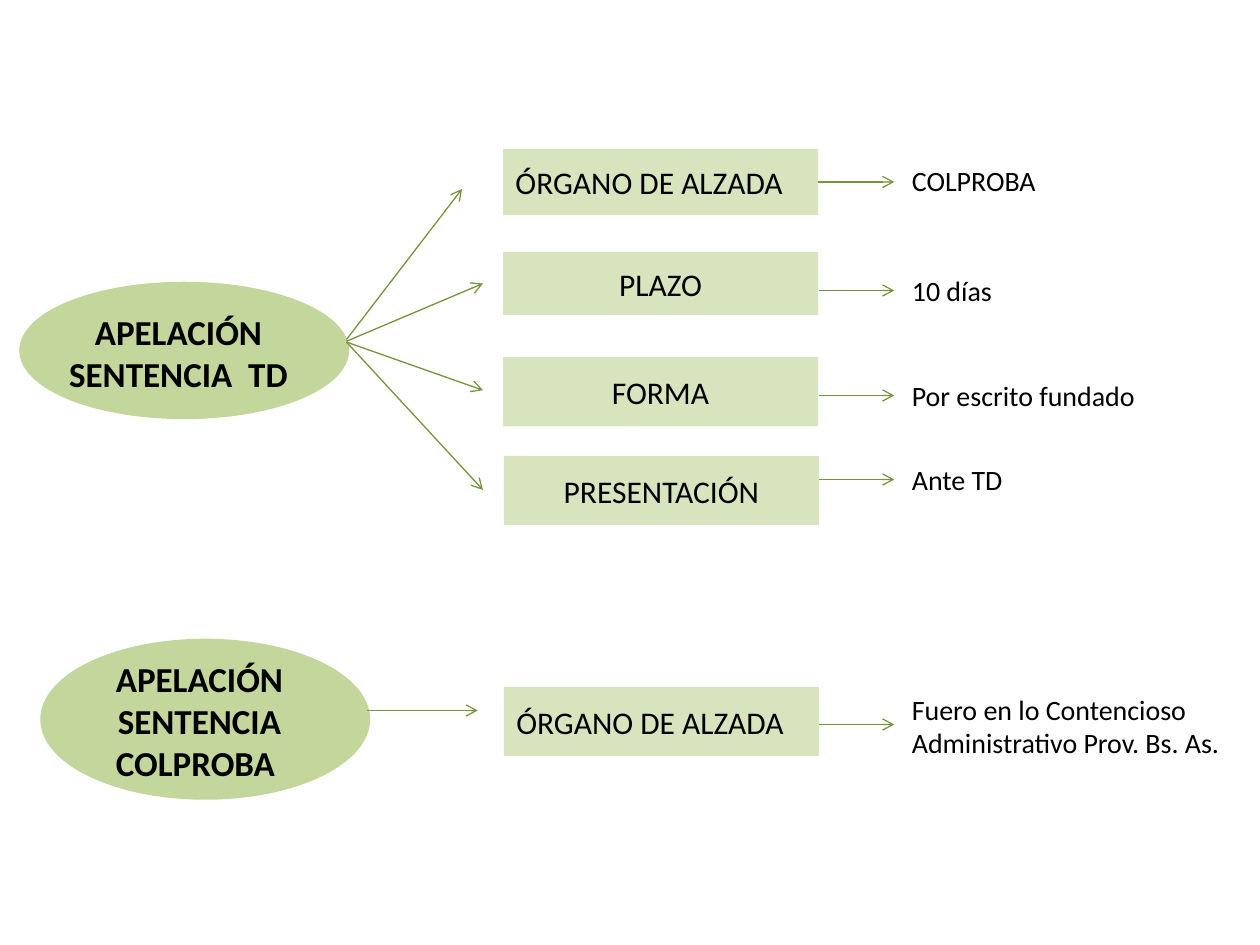
from dataclasses import dataclass

from lxml import etree
from pptx import Presentation
from pptx.dml.color import RGBColor
from pptx.enum.shapes import MSO_CONNECTOR, MSO_SHAPE
from pptx.enum.text import MSO_ANCHOR, PP_ALIGN
from pptx.oxml.ns import qn
from pptx.util import Pt

RECTANGLE, OVAL = MSO_SHAPE.RECTANGLE, MSO_SHAPE.OVAL
STRAIGHT = MSO_CONNECTOR.STRAIGHT
LEFT, CENTER = PP_ALIGN.LEFT, PP_ALIGN.CENTER
TOP, MIDDLE = MSO_ANCHOR.TOP, MSO_ANCHOR.MIDDLE

OVAL_GREEN, BOX_GREEN, ARROW_GREEN, BLACK = "C3D69B", "D7E4BD", "77933C", "000000"
BOX_WIDTH, BOX_RIGHT = 180, 468
ANSWER_LEFT, ARROW_END = 514, 511
RIGHT_SIDE = 3

TOPIC_FONT = {"name": "Calibri", "size": Pt(20), "bold": True}
BOX_FONT = {"name": "Calibri", "size": Pt(18)}
ANSWER_FONT = {"name": "Calibri", "size": Pt(16)}


@dataclass
class Topic:
    text: str
    oval: tuple
    text_area: tuple


@dataclass
class Row:
    label: str
    left: float
    top: float
    height: float
    align: PP_ALIGN
    answer: str
    answer_top: float
    answer_size: tuple
    arrow_y: float


LINE_SIZE = (189.5, 26.6)
TOPICS = [
    Topic("APELACIÓN SENTENCIA  TD", (12, 162, 186.5, 76.5), (18, 174, 168, 70)),
    Topic("APELACIÓN SENTENCIA COLPROBA ", (24, 366, 186.5, 90), (30, 372, 168, 67)),
]
ROWS = [
    Row("ÓRGANO DE ALZADA", 287.5, 85, 38, LEFT, "COLPROBA", 90, LINE_SIZE, 104),
    Row("PLAZO", 287.5, 144, 36, CENTER, "10 días", 153, LINE_SIZE, 166),
    Row("FORMA", 287.5, 204, 39.5, CENTER, "Por escrito fundado", 213, LINE_SIZE, 226),
    Row("PRESENTACIÓN", 288, 260.5, 39.5, CENTER, "Ante TD", 261, LINE_SIZE, 274),
    Row("ÓRGANO DE ALZADA", 288, 392.5, 39.5, LEFT,
        "Fuero en lo Contencioso Administrativo Prov. Bs. As.", 392, (206, 46), 414),
]
# Arrows leaving the topics: start and end
TOPIC_ARROWS = [
    ((198, 194), (264, 108)),
    ((198, 195), (276, 162)),
    ((198, 195.5), (276, 223)),
    ((198, 195.5), (276, 280)),
    ((210, 406), (273, 406)),
]


def color(hex_value: str) -> RGBColor:
    return RGBColor.from_string(hex_value)


def add_shape(slide, kind: MSO_SHAPE, area: tuple, fill: str):
    shape = slide.shapes.add_shape(kind, *map(Pt, area))
    shape.shadow.inherit = False
    shape.fill.solid()
    shape.fill.fore_color.rgb = color(fill)
    shape.line.fill.background()
    return shape


def write_text(shape, text: str, font: dict, align: PP_ALIGN, anchor: MSO_ANCHOR) -> None:
    frame = shape.text_frame
    frame.word_wrap = True
    frame.vertical_anchor = anchor
    paragraph = frame.paragraphs[0]
    paragraph.alignment = align
    run = paragraph.add_run()
    run.text = text
    for name, value in font.items():
        setattr(run.font, name, value)
    run.font.color.rgb = color(BLACK)


def add_text(slide, area: tuple, text: str, font: dict, align: PP_ALIGN) -> None:
    box = slide.shapes.add_textbox(*map(Pt, area))
    write_text(box, text, font, align, TOP)


def add_arrow(slide, start: tuple, end: tuple):
    arrow = slide.shapes.add_connector(STRAIGHT, *map(Pt, start + end))
    arrow.line.color.rgb = color(ARROW_GREEN)
    arrow.line.width = Pt(0.75)
    etree.SubElement(arrow.line._get_or_add_ln(), qn("a:tailEnd"), type="arrow")
    etree.SubElement(arrow._element.spPr, qn("a:effectLst"))
    return arrow


def draw_topic(slide, topic: Topic) -> None:
    oval = add_shape(slide, OVAL, topic.oval, OVAL_GREEN)
    oval.line.color.rgb = color(OVAL_GREEN)
    oval.line.width = Pt(2)
    add_text(slide, topic.text_area, topic.text, TOPIC_FONT, CENTER)


def draw_row(slide, row: Row) -> None:
    box = add_shape(slide, RECTANGLE, (row.left, row.top, BOX_WIDTH, row.height), BOX_GREEN)
    write_text(box, row.label, BOX_FONT, row.align, MIDDLE)
    answer_area = (ANSWER_LEFT, row.answer_top, *row.answer_size)
    add_text(slide, answer_area, row.answer, ANSWER_FONT, LEFT)
    arrow = add_arrow(slide, (BOX_RIGHT, row.arrow_y), (ARROW_END, row.arrow_y))
    if row.arrow_y == row.top + row.height / 2:
        arrow.begin_connect(box, RIGHT_SIDE)


def main() -> None:
    presentation = Presentation()
    presentation.slide_width, presentation.slide_height = Pt(720), Pt(540)
    slide = presentation.slides.add_slide(presentation.slide_layouts[6])

    # Topics on the left
    for topic in TOPICS:
        draw_topic(slide, topic)
    # Boxes with their answers
    for row in ROWS:
        draw_row(slide, row)
    # Arrows from the topics to the boxes
    for start, end in TOPIC_ARROWS:
        add_arrow(slide, start, end)

    presentation.save("out.pptx")


if __name__ == "__main__":
    main()
